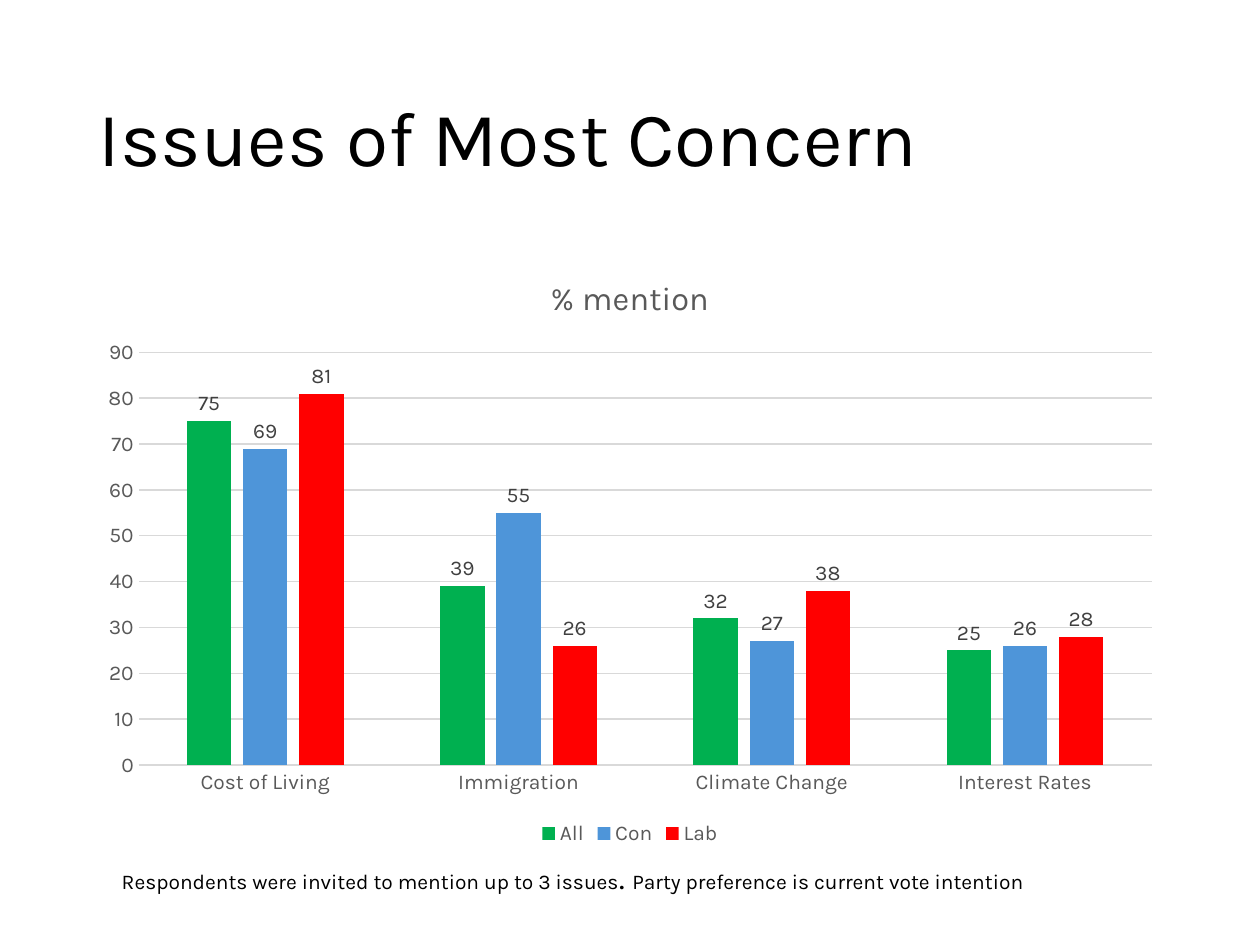
"""Build a slide with a clustered column chart of the issues of most concern."""

from pptx import Presentation
from pptx.chart.data import CategoryChartData
from pptx.dml.color import RGBColor
from pptx.enum.chart import XL_CHART_TYPE as ChartType
from pptx.enum.chart import XL_LABEL_POSITION as LabelPosition
from pptx.enum.chart import XL_LEGEND_POSITION as LegendPosition
from pptx.enum.chart import XL_TICK_MARK as TickMark
from pptx.enum.text import MSO_ANCHOR as Anchor
from pptx.util import Pt

FONT = "Karla"
GREY = "595959"
LIGHT_GREY = "D9D9D9"


def style_font(font, size, color):
    font.name = FONT
    font.size = Pt(size)
    font.bold = False
    font.color.rgb = RGBColor.from_string(color)


def add_text(paragraph, text, size=12, color="000000"):
    run = paragraph.add_run()
    run.text = text
    style_font(run.font, size, color)


presentation = Presentation()
presentation.slide_width = Pt(720)
presentation.slide_height = Pt(540)
slide = presentation.slides.add_slide(presentation.slide_layouts[6])

title = slide.shapes.add_textbox(Pt(49.5), Pt(28.75), Pt(621), Pt(104.4)).text_frame
title.word_wrap = True
title.vertical_anchor = Anchor.MIDDLE
title.paragraphs[0].line_spacing = 0.9
add_text(title.paragraphs[0], "Issues of Most Concern", size=44)

series_styles = {
    "All": ([75, 39, 32, 25], "00B050"),
    "Con": ([69, 55, 27, 26], "4E95D9"),
    "Lab": ([81, 26, 38, 28], "FF0000"),
}
chart_data = CategoryChartData()
chart_data.categories = ["Cost of Living", "Immigration", "Climate Change", "Interest Rates"]
for name, (values, color) in series_styles.items():
    chart_data.add_series(name, values)

chart = slide.shapes.add_chart(
    ChartType.COLUMN_CLUSTERED, Pt(49.5), Pt(143.75), Pt(621), Pt(342.6), chart_data
).chart
style_font(chart.font, 10, "000000")
chart.has_title = True
add_text(chart.chart_title.text_frame.paragraphs[0], "% mention", size=18.6, color=GREY)
chart.chart_title.include_in_layout = False
chart.has_legend = True
chart.legend.position = LegendPosition.BOTTOM
chart.legend.include_in_layout = False
style_font(chart.legend.font, 12, GREY)

for axis in (chart.category_axis, chart.value_axis):
    axis.major_tick_mark = axis.minor_tick_mark = TickMark.NONE
    style_font(axis.tick_labels.font, 12, GREY)
chart.value_axis.minimum_scale = 0
chart.value_axis.maximum_scale = 90
chart.value_axis.major_unit = 10
chart.value_axis.format.line.fill.background()
for line in (chart.category_axis.format.line, chart.value_axis.major_gridlines.format.line):
    line.width = Pt(0.75)
    line.color.rgb = RGBColor.from_string(LIGHT_GREY)

plot = chart.plots[0]
plot.gap_width = 219
plot.overlap = -27
plot.vary_by_categories = False
for series in plot.series:
    values, color = series_styles[series.name]
    series.format.fill.solid()
    series.format.fill.fore_color.rgb = RGBColor.from_string(color)
    series.invert_if_negative = False
    labels = series.data_labels
    labels.show_value = True
    labels.position = LabelPosition.OUTSIDE_END
    style_font(labels.font, 12, "404040")

footnote = slide.shapes.add_textbox(Pt(62.5), Pt(486.5), Pt(600.5), Pt(29)).text_frame
footnote.word_wrap = True
for text, size in (
    ("Respondents were invited to mention up to 3 issues", 12),
    (". ", 18),
    ("Party preference is current vote intention", 12),
):
    add_text(footnote.paragraphs[0], text, size=size)

presentation.save("out.pptx")
